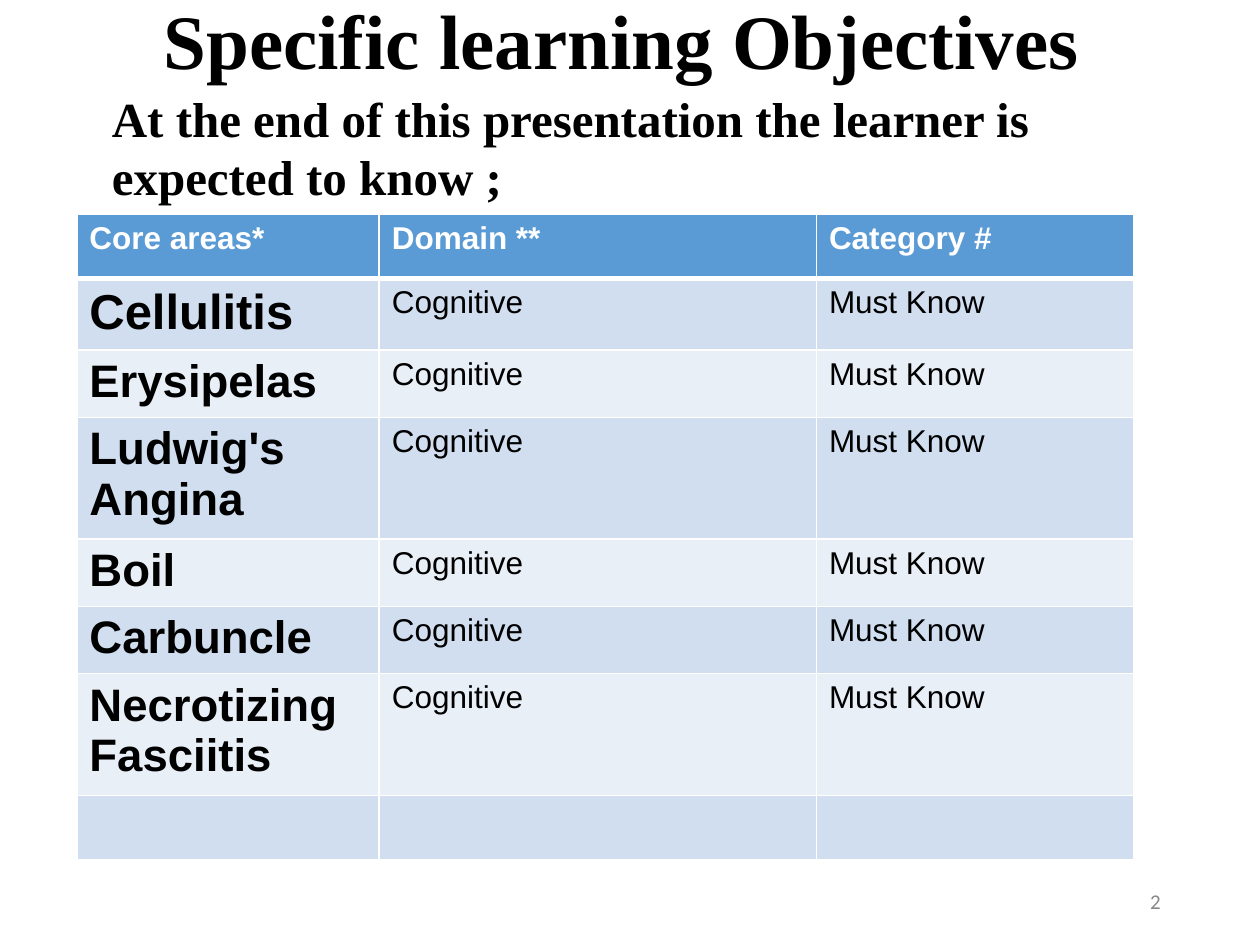
import lxml.etree
import pptx
import pptx.dml.color
import pptx.enum.text
import pptx.oxml.ns
import pptx.util

BLACK = pptx.dml.color.RGBColor(0x00, 0x00, 0x00)
WHITE = pptx.dml.color.RGBColor(0xFF, 0xFF, 0xFF)
GRAY = pptx.dml.color.RGBColor(0x88, 0x88, 0x88)
HEADER_BLUE = pptx.dml.color.RGBColor(0x5B, 0x9B, 0xD5)
BANDS = (
    pptx.dml.color.RGBColor(0xD0, 0xDE, 0xEF),
    pptx.dml.color.RGBColor(0xE9, 0xEF, 0xF7),
)

GRID_COLUMNS, GRID_ROWS = 100, 75
HEADERS = ("Core areas*", "Domain **", "Category #")
CORE_AREAS = (
    "Cellulitis",
    "Erysipelas",
    "Ludwig's Angina",
    "Boil",
    "Carbuncle",
    "Necrotizing Fasciitis",
)


class ObjectivesSlide:
    """Draws styled elements on one slide using a 100 by 75 grid."""

    heading_font = "Times New Roman"
    table_font = "Arial"
    number_font = "Calibri"

    def __init__(self, presentation):
        self.column = presentation.slide_width / GRID_COLUMNS
        self.row = presentation.slide_height / GRID_ROWS
        self.slide = presentation.slides.add_slide(presentation.slide_layouts[6])

    def place(self, left, top, width, height):
        return (
            round(left * self.column),
            round(top * self.row),
            round(width * self.column),
            round(height * self.row),
        )

    def style(self, paragraph, font, size, color, bold):
        for target in (paragraph.font, *(run.font for run in paragraph.runs)):
            target.name = font
            target.size = pptx.util.Pt(size)
            target.bold = bold
            target.color.rgb = color

    def text(self, text, box, font, size, color=BLACK, bold=True,
             anchor=pptx.enum.text.MSO_ANCHOR.TOP,
             alignment=pptx.enum.text.PP_ALIGN.LEFT, line_spacing=None):
        text_frame = self.slide.shapes.add_textbox(*self.place(*box)).text_frame
        text_frame.word_wrap = True
        text_frame.vertical_anchor = anchor
        text_frame.text = text
        paragraph = text_frame.paragraphs[0]
        paragraph.alignment = alignment
        paragraph.line_spacing = line_spacing
        self.style(paragraph, font, size, color, bold)

    def border(self, cell, side, width):
        properties = cell._tc.get_or_add_tcPr()
        line = lxml.etree.SubElement(properties, pptx.oxml.ns.qn(f"a:ln{side}"))
        line.set("w", str(pptx.util.Pt(width)))
        fill = lxml.etree.SubElement(line, pptx.oxml.ns.qn("a:solidFill"))
        color = lxml.etree.SubElement(fill, pptx.oxml.ns.qn("a:srgbClr"))
        color.set("val", str(WHITE))

    def cell(self, cell, text, fill, size, color, bold, top, bottom):
        for side, width in (("L", 1), ("R", 1), ("T", top), ("B", bottom)):
            self.border(cell, side, width)
        cell.fill.solid()
        cell.fill.fore_color.rgb = fill
        cell.text_frame.text = text
        self.style(cell.text_frame.paragraphs[0], self.table_font, size, color, bold)

    def table(self, left, top, widths, heights, records):
        box = self.place(left, top, sum(widths), sum(heights))
        table = self.slide.shapes.add_table(len(heights), len(widths), *box).table
        for column, width in zip(table.columns, widths):
            column.width = round(width * self.column)
        for row, height in zip(table.rows, heights):
            row.height = round(height * self.row)
        for row_index, record in enumerate(records):
            header = row_index == 0
            fill = HEADER_BLUE if header else BANDS[(row_index - 1) % 2]
            for column_index, text in enumerate(record):
                core_area = not header and column_index == 0 and text
                size = (28 if row_index == 1 else 26) if core_area else 18
                self.cell(
                    table.cell(row_index, column_index), text, fill, size,
                    WHITE if header else BLACK, bool(header or core_area),
                    3 if row_index == 1 else 1, 3 if header else 1,
                )


def main():
    presentation = pptx.Presentation()
    presentation.slide_width = pptx.util.Inches(10)
    presentation.slide_height = pptx.util.Inches(7.5)
    slide = ObjectivesSlide(presentation)
    middle = pptx.enum.text.MSO_ANCHOR.MIDDLE

    slide.text("Specific learning Objectives", (12, -2.5, 76, 12.1),
               slide.heading_font, 44, anchor=middle, line_spacing=0.9)
    records = [
        HEADERS,
        *((area, "Cognitive", "Must Know") for area in CORE_AREAS),
        ("", "", ""),
    ]
    slide.table(6.1, 17, (24, 34.7, 25.2), (5.1, 5.7, *[5.1] * 6), records)
    slide.text("At the end of this presentation the learner is expected to know ;",
               (7.9, 6.5, 80.4, 5.7), slide.heading_font, 28)
    slide.text("2", (70.6, 69.5, 22.5, 4), slide.number_font, 12, GRAY, False,
               middle, pptx.enum.text.PP_ALIGN.RIGHT)
    presentation.save("out.pptx")


if __name__ == "__main__":
    main()
